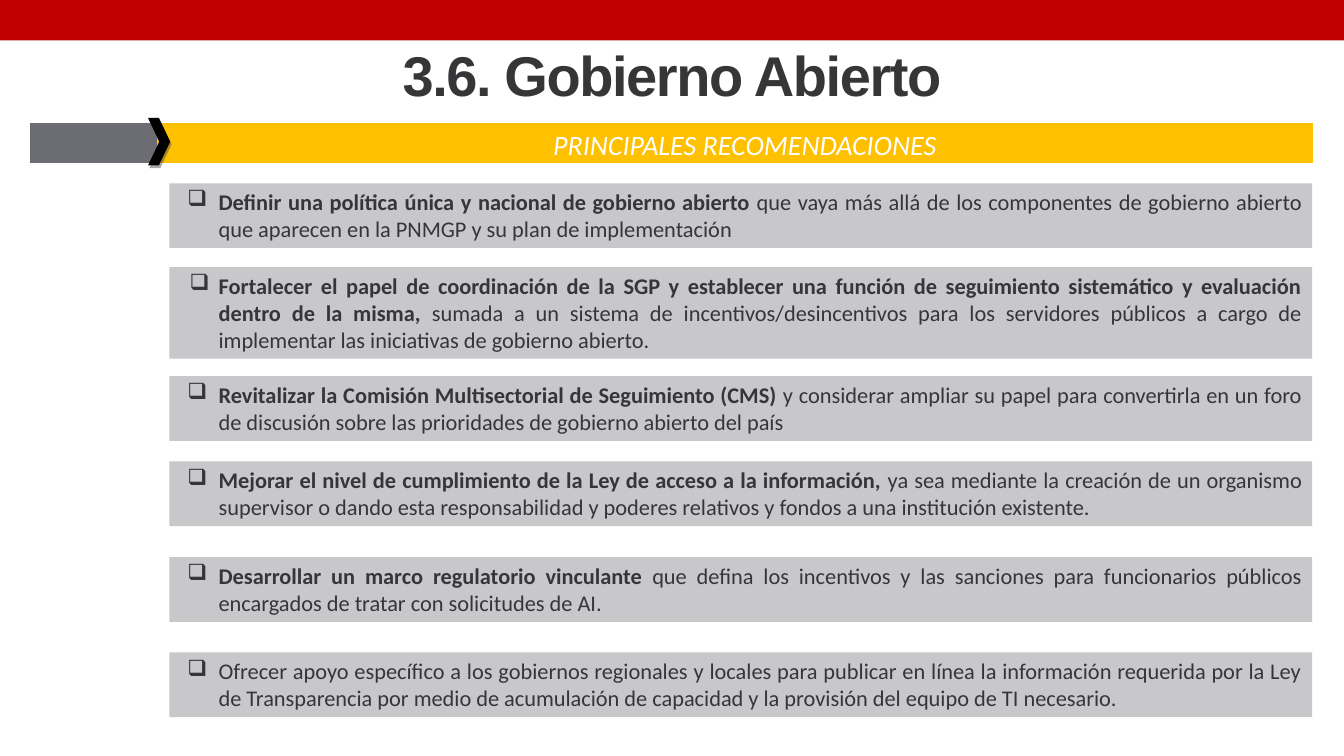
"""Builds the slide of main recommendations on open government."""
from lxml.etree import SubElement
from pptx import Presentation
from pptx.dml.color import RGBColor
from pptx.enum.shapes import MSO_SHAPE as Shape
from pptx.enum.text import MSO_ANCHOR as Anchor, MSO_AUTO_SIZE as Fit, PP_ALIGN as Align
from pptx.oxml import parse_xml
from pptx.oxml.ns import nsdecls, qn
from pptx.util import Cm, Pt

DARK, GOLD, GREY = "363639", "FFC000", "C8C8CB"


def tint(fill, color):
    fill.solid()
    fill.fore_color.rgb = RGBColor.from_string(color)


def write(para, text, size=16, face="Calibri", color=DARK, bold=False, italic=False):
    run = para.add_run()
    run.text = text
    font = run.font
    font.size, font.name, font.bold, font.italic = Pt(size), face, bold, italic
    tint(font.fill, color)
    return run


deck = Presentation()
deck.slide_width, deck.slide_height = Cm(33.87), Cm(19.05)
slide = deck.slides.add_slide(deck.slide_layouts[5])
shapes = slide.shapes

title = shapes.title
title.left, title.top, title.width, title.height = Cm(1.25), Cm(0.5), Cm(31.37), Cm(2.75)
title.text_frame.vertical_anchor = Anchor.MIDDLE
para = title.text_frame.paragraphs[0]
para.alignment = Align.CENTER
run = write(para, "3.6. Gobierno Abierto", size=40, face="Arial", bold=True)
run.font._element.set("spc", "-100")

band = shapes.add_shape(Shape.RECTANGLE, 0, 0, deck.slide_width, Cm(1.02))
band.shadow.inherit = False
tint(band.fill, "C00000")
band.line.fill.background()

table = shapes.add_table(1, 3, Cm(0.76), Cm(3.1), Cm(32.28), Cm(1)).table
table.first_row = table.horz_banding = False
style = table._tbl.tblPr.find(qn("a:tableStyleId"))
style.text = "{2D5ABB26-0587-4C30-8999-92F81FD0307C}"
for col, (width, color) in enumerate([(3.2, "6C6C73"), (0.46, GOLD), (28.62, GOLD)]):
    table.columns[col].width = Cm(width)
    cell = table.cell(0, col)
    tint(cell.fill, color)
    cell.margin_top = cell.margin_bottom = 0
    cell.margin_left = cell.margin_right = Cm(0.2)
    cell.vertical_anchor = Anchor.MIDDLE
para = cell.text_frame.paragraphs[0]
para.alignment, para.line_spacing = Align.CENTER, 1.15
write(para, "PRINCIPALES RECOMENDACIONES", size=20, color="FFFFFF", italic=True)

arrow = shapes.add_shape(Shape.CHEVRON, Cm(3.73), Cm(2.97), Cm(0.56), Cm(1.2))
arrow.adjustments[0] = 0.51
tint(arrow.fill, "000000")
arrow.line.fill.background()
arrow._element.spPr.append(parse_xml(
    f'<a:effectLst {nsdecls("a")}><a:outerShdw blurRad="0" dist="{Pt(2.2)}" dir="3780000">'
    '<a:srgbClr val="525252"><a:alpha val="50000"/></a:srgbClr></a:outerShdw></a:effectLst>'))

items = [
    (4.62, 1.63, 0.79, "Definir una política única y nacional de gobierno abierto ",
     "que vaya más allá de los componentes de gobierno abierto que aparecen en la PNMGP "
     "y su plan de implementación"),
    (6.73, 2.31, 0.73, "Fortalecer el papel de coordinación de la SGP y establecer una función "
     "de seguimiento sistemático y evaluación dentro de la misma, ",
     "sumada a un sistema de incentivos/desincentivos para los servidores públicos a cargo "
     "de implementar las iniciativas de gobierno abierto."),
    (9.48, 1.63, 0.79, "Revitalizar la Comisión Multisectorial de Seguimiento (CMS) ",
     "y considerar ampliar su papel para convertirla en un foro de discusión sobre las "
     "prioridades de gobierno abierto del país "),
    (11.63, 1.63, 0.79, "Mejorar el nivel de cumplimiento de la Ley de acceso a la información, ",
     "ya sea mediante la creación de un organismo supervisor o dando esta responsabilidad "
     "y poderes relativos y fondos a una institución existente."),
    (14.04, 1.63, 0.79, "Desarrollar un marco regulatorio vinculante ",
     "que defina los incentivos y las sanciones para funcionarios públicos encargados de "
     "tratar con solicitudes de AI. "),
    (16.44, 1.63, 0.79, "",
     "Ofrecer apoyo específico a los gobiernos regionales y locales para publicar en línea "
     "la información requerida por la Ley de Transparencia por medio de acumulación de "
     "capacidad y la provisión del equipo de TI necesario."),
]
for top, height, hang, lead, rest in items:
    box = shapes.add_shape(Shape.RECTANGLE, Cm(4.27), Cm(top), Cm(28.8), Cm(height))
    box.shadow.inherit = False
    tint(box.fill, GREY)
    box.line.fill.background()
    frame = box.text_frame
    frame.word_wrap, frame.auto_size = True, Fit.SHAPE_TO_FIT_TEXT
    frame.vertical_anchor = Anchor.TOP
    para = frame.paragraphs[0]
    para.alignment = Align.JUSTIFY
    props = para._p.get_or_add_pPr()
    props.set("marL", str(Cm(0.99)))
    props.set("indent", str(-Cm(hang)))
    SubElement(props, qn("a:buChar")).set("char", "❑")
    if lead:
        write(para, lead, bold=True)
    write(para, rest)

deck.save("out.pptx")
